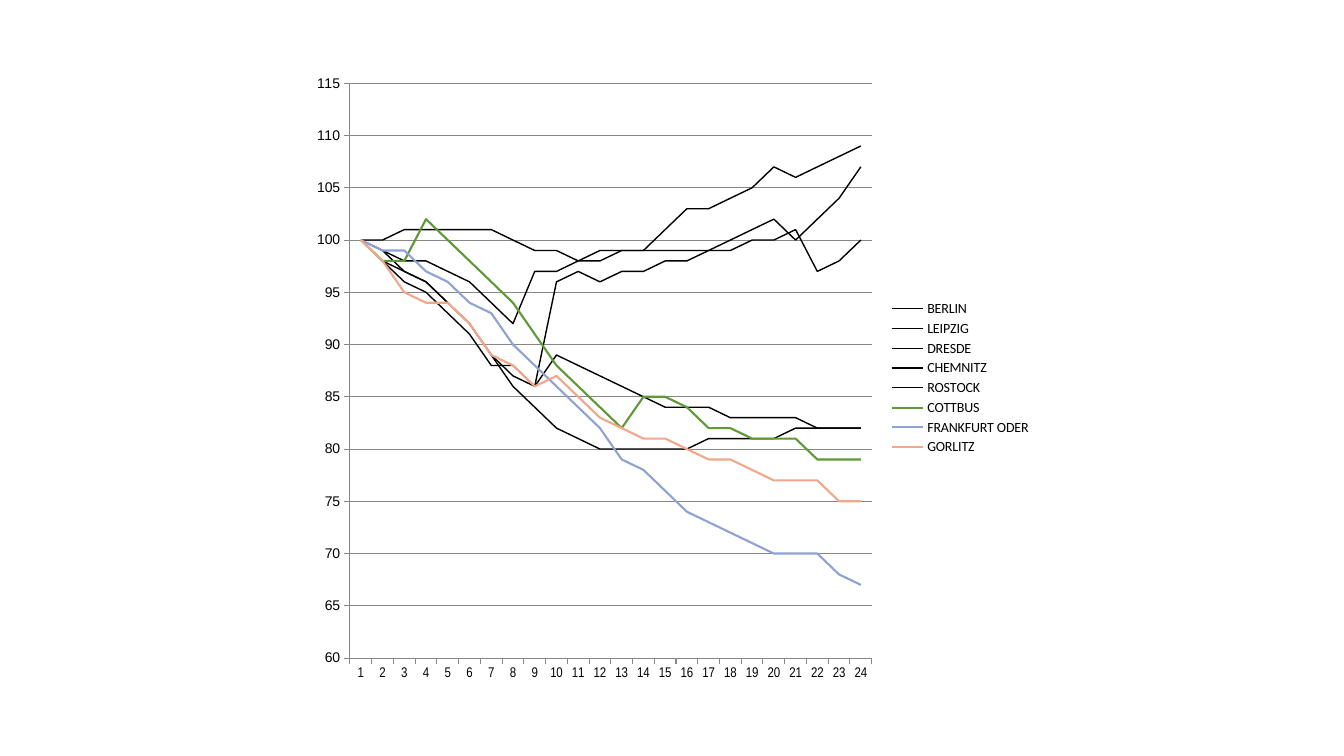
from lxml import etree
from pptx import Presentation
from pptx.chart.data import CategoryChartData
from pptx.dml.color import RGBColor
from pptx.enum import chart as kinds
from pptx.oxml import parse_xml
from pptx.oxml.ns import nsdecls
from pptx.util import Inches, Pt

COLOURS = {
    "black": "000000",
    "grid": "878787",
    "green": "5F9937",
    "blue": "8FA2D4",
    "orange": "F1A78A",
}

CITIES = [
    ("BERLIN", "black", 1, [100, 100, 101, 101, 101, 101, 101, 100, 99, 99, 98, 99,
                            99, 99, 99, 99, 99, 99, 100, 100, 101, 97, 98, 100]),
    ("LEIPZIG", "black", 1, [100, 98, 97, 96, 94, 92, 89, 87, 86, 96, 97, 96,
                             97, 97, 98, 98, 99, 100, 101, 102, 100, 102, 104, 107]),
    ("DRESDE", "black", 1, [100, 99, 98, 98, 97, 96, 94, 92, 97, 97, 98, 98,
                            99, 99, 101, 103, 103, 104, 105, 107, 106, 107, 108, 109]),
    ("CHEMNITZ", "black", 1, [100, 98, 96, 95, 93, 91, 88, 88, 86, 89, 88, 87,
                              86, 85, 84, 84, 84, 83, 83, 83, 83, 82, 82, 82]),
    ("ROSTOCK", "black", 1, [100, 99, 97, 96, 94, 92, 89, 86, 84, 82, 81, 80,
                             80, 80, 80, 80, 81, 81, 81, 81, 82, 82, 82, 82]),
    ("COTTBUS", "green", 1.5, [100, 98, 98, 102, 100, 98, 96, 94, 91, 88, 86, 84,
                               82, 85, 85, 84, 82, 82, 81, 81, 81, 79, 79, 79]),
    ("FRANKFURT ODER", "blue", 1.5, [100, 99, 99, 97, 96, 94, 93, 90, 88, 86, 84, 82,
                                     79, 78, 76, 74, 73, 72, 71, 70, 70, 70, 68, 67]),
    ("GORLITZ", "orange", 1.5, [100, 98, 95, 94, 94, 92, 89, 88, 86, 87, 85, 83,
                                82, 81, 81, 80, 79, 79, 78, 77, 77, 77, 75, 75]),
]


def colour(name):
    return RGBColor.from_string(COLOURS[name])


def set_line(line, name, width):
    line.color.rgb = colour(name)
    line.width = Pt(width)


deck = Presentation()
deck.slide_width = Inches(13.33)
deck.slide_height = Inches(7.5)
page = deck.slides.add_slide(deck.slide_layouts[6])

data = CategoryChartData(number_format="0")
data.categories = [str(year) for year in range(1, 25)]
for city, _, _, values in CITIES:
    data.add_series(city, values)

frame = page.shapes.add_chart(
    kinds.XL_CHART_TYPE.LINE,
    Inches(3.01), Inches(0.62), Inches(7.32), Inches(6.26), data,
)
chart = frame.chart
chart.has_title = False
chart.font.name = "Calibri"
chart.font.size = Pt(10)
chart.font.color.rgb = colour("black")
chart.has_legend = True
chart.legend.position = kinds.XL_LEGEND_POSITION.RIGHT
chart.legend.include_in_layout = False

plot = chart.plots[0]
plot.vary_by_categories = False
for series, (_, tone, width, _) in zip(plot.series, CITIES):
    series.smooth = False
    series.marker.style = kinds.XL_MARKER_STYLE.NONE
    set_line(series.format.line, tone, width)

for axis, face in ((chart.category_axis, "Arial Narrow"), (chart.value_axis, "Arial")):
    axis.major_tick_mark = kinds.XL_TICK_MARK.OUTSIDE
    axis.minor_tick_mark = kinds.XL_TICK_MARK.NONE
    axis.tick_labels.font.name = face
    axis.tick_labels.font.size = Pt(10)
    axis.tick_labels.font.color.rgb = colour("black")
    set_line(axis.format.line, "grid", 0.75)

scale = chart.value_axis
scale.minimum_scale = 60
scale.maximum_scale = 115
scale.major_unit = 5
scale.tick_labels.number_format = "0"
scale.tick_labels.number_format_is_linked = False
scale.has_major_gridlines = True
set_line(scale.major_gridlines.format.line, "grid", 0.75)

area = chart._chartSpace.chart.plotArea
for layout in area.findall("c:layout", area.nsmap):
    area.remove(layout)
layout = parse_xml(
    f'<c:layout {nsdecls("c")}><c:manualLayout><c:layoutTarget val="inner"/>'
    '<c:xMode val="edge"/><c:yMode val="edge"/></c:manualLayout></c:layout>'
)
for side, share in (("x", 0.063), ("y", 0.033), ("w", 0.707), ("h", 0.911)):
    item = etree.SubElement(layout[0], f"{{{layout.nsmap['c']}}}{side}")
    item.set("val", str(share))
area.insert(0, layout)

deck.save("out.pptx")
